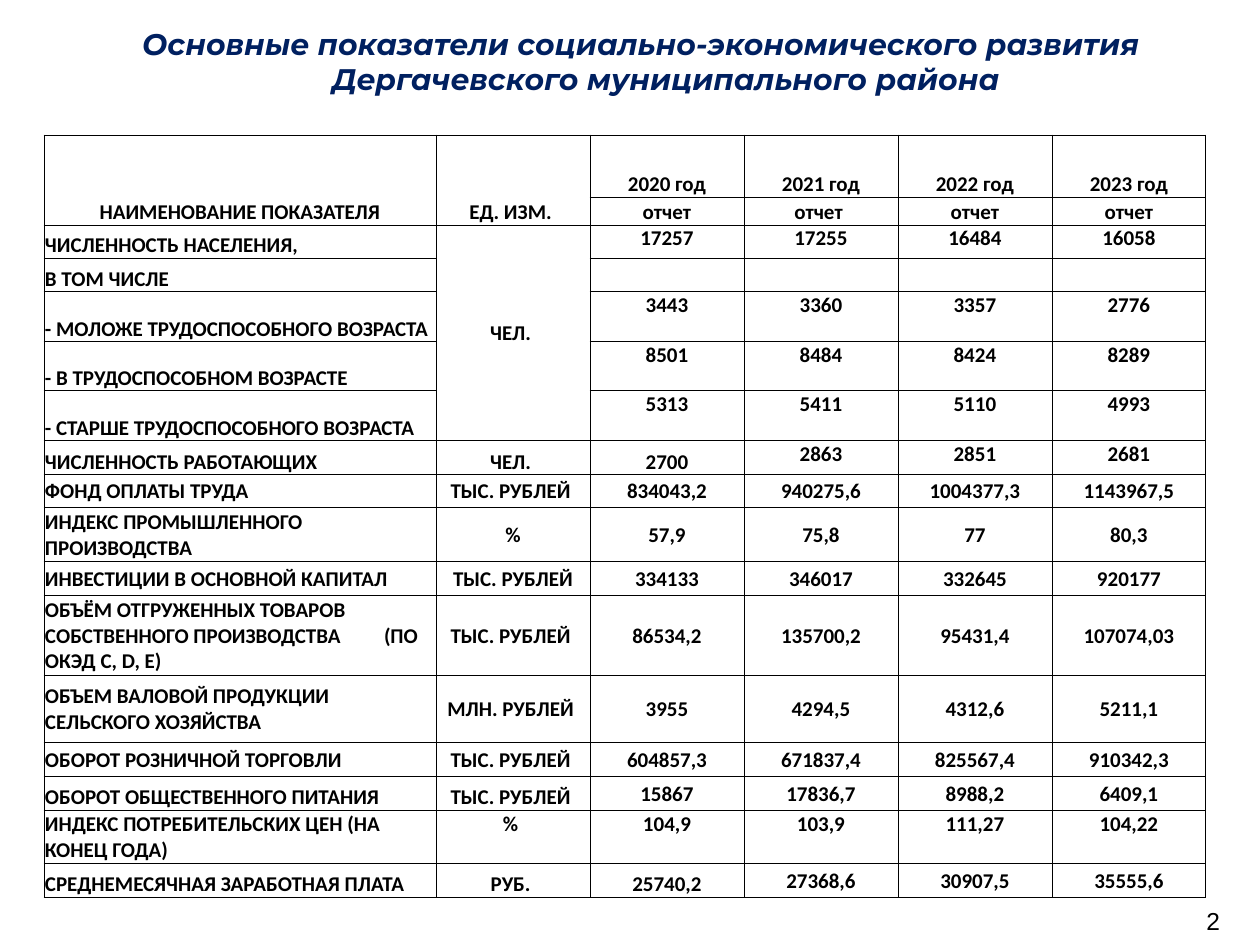
from lxml import etree
from pptx import Presentation, util as u
from pptx.dml.color import RGBColor
from pptx.enum import text
from pptx.oxml.ns import qn

PX = 7257
HUE = {"navy": "002060", "black": "000000"}
ANCHOR = {
    "t": text.MSO_ANCHOR.TOP,
    "m": text.MSO_ANCHOR.MIDDLE,
    "b": text.MSO_ANCHOR.BOTTOM,
}


def style(para, face, size, hue, bold=False, slant=False):
    for run in para.runs:
        font = run.font
        font.name, font.size = face, u.Pt(size)
        font.bold, font.italic = bold, slant
        font.color.rgb = RGBColor.from_string(HUE[hue])


def border(cell):
    props = cell._tc.get_or_add_tcPr()
    for side in ("a:lnL", "a:lnR", "a:lnT", "a:lnB"):
        line = etree.SubElement(props, qn(side), w=str(u.Pt(0.5)))
        fill = etree.SubElement(line, qn("a:solidFill"))
        etree.SubElement(fill, qn("a:srgbClr"), val=HUE["black"])


deck = Presentation()
deck.slide_width, deck.slide_height = u.Inches(10), u.Inches(7.5)
slide = deck.slides.add_slide(deck.slide_layouts[5])

title = slide.shapes.title
title.left, title.top = 107 * PX, 16 * PX
title.width, title.height = 1136 * PX, 90 * PX
frame = title.text_frame
frame.text = (
    "Основные показатели социально-экономического развития\n"
    "Дергачевского муниципального района"
)
frame.word_wrap = True
frame.auto_size = text.MSO_AUTO_SIZE.NONE
frame.vertical_anchor = ANCHOR["m"]
frame.margin_left, frame.margin_right = 13 * PX, 81 * PX
for para in frame.paragraphs:
    para.alignment = text.PP_ALIGN.CENTER
    style(para, "Montserrat", 17, "navy", True, True)
frame.paragraphs[1]._p.get_or_add_pPr().set("marL", str(50 * PX))

ROWS = [
    (62, "bbbbbb", "НАИМЕНОВАНИЕ ПОКАЗАТЕЛЯ|ЕД. ИЗМ. |2020 год|2021 год|2022 год|2023 год"),
    (28, "bbbbbb", "||отчет|отчет |отчет|отчет"),
    (33, "bmtttt", "ЧИСЛЕННОСТЬ НАСЕЛЕНИЯ,|ЧЕЛ. |17257|17255|16484|16058"),
    (34, "bmtttt", "В ТОМ ЧИСЛЕ|||||"),
    (50, "bmtttt", "- МОЛОЖЕ ТРУДОСПОСОБНОГО ВОЗРАСТА||3443|3360|3357|2776"),
    (49, "bmtttt", "- В ТРУДОСПОСОБНОМ ВОЗРАСТЕ||8501|8484|8424|8289"),
    (50, "bmtttt", "- СТАРШЕ ТРУДОСПОСОБНОГО ВОЗРАСТА||5313|5411|5110|4993"),
    (34, "bbbttt", "ЧИСЛЕННОСТЬ РАБОТАЮЩИХ|ЧЕЛ. |2700|2863|2851|2681"),
    (33, "mmmmmm", "ФОНД ОПЛАТЫ ТРУДА|ТЫС. РУБЛЕЙ |834043,2|940275,6|1004377,3|1143967,5"),
    (54, "mmmmmm", "ИНДЕКС ПРОМЫШЛЕННОГО ПРОИЗВОДСТВА|%|57,9|75,8|77|80,3"),
    (34, "mmmmmm", "ИНВЕСТИЦИИ В ОСНОВНОЙ КАПИТАЛ|ТЫС. РУБЛЕЙ|334133|346017|332645|920177"),
    (80, "mmmmmm", "ОБЪЁМ ОТГРУЖЕННЫХ ТОВАРОВ СОБСТВЕННОГО ПРОИЗВОДСТВА\t(ПО ОКЭД С, D, E)"
               "|ТЫС. РУБЛЕЙ |86534,2|135700,2|95431,4|107074,03"),
    (67, "mmmmmm", "ОБЪЕМ ВАЛОВОЙ ПРОДУКЦИИ СЕЛЬСКОГО ХОЗЯЙСТВА"
               "|МЛН. РУБЛЕЙ |3955|4294,5|4312,6|5211,1"),
    (34, "mmmmmm", "ОБОРОТ РОЗНИЧНОЙ ТОРГОВЛИ|ТЫС. РУБЛЕЙ |604857,3|671837,4|825567,4|910342,3"),
    (34, "bbmmmm", "ОБОРОТ ОБЩЕСТВЕННОГО ПИТАНИЯ|ТЫС. РУБЛЕЙ |15867|17836,7|8988,2|6409,1"),
    (53, "tttttt", "ИНДЕКС ПОТРЕБИТЕЛЬСКИХ ЦЕН (НА КОНЕЦ ГОДА)|% |104,9|103,9|111,27|104,22"),
    (34, "bbbmmm", "СРЕДНЕМЕСЯЧНАЯ ЗАРАБОТНАЯ ПЛАТА|РУБ. |25740,2|27368,6|30907,5|35555,6"),
]
COLS = [392] + [154] * 5
high = sum(row[0] for row in ROWS)
table = slide.shapes.add_table(
    len(ROWS), len(COLS), 44 * PX, 135 * PX, sum(COLS) * PX, high * PX
).table
table.first_row = table.horz_banding = False
for col, wide in zip(table.columns, COLS):
    col.width = wide * PX

for r, (tall, codes, line) in enumerate(ROWS):
    table.rows[r].height = tall * PX
    for c, words in enumerate(line.split("|")):
        cell = table.cell(r, c)
        border(cell)
        cell.fill.background()
        cell.margin_left = cell.margin_right = cell.margin_top = PX
        cell.margin_bottom = 0
        cell.vertical_anchor = ANCHOR[codes[c]]
        para = cell.text_frame.paragraphs[0]
        para.text = words
        if c or r < 2:
            para.alignment = text.PP_ALIGN.CENTER
        else:
            para.alignment = text.PP_ALIGN.LEFT
        style(para, "Calibri", 12, "black", True)
        if not words:
            etree.SubElement(para._p, qn("a:endParaRPr"), sz="1200")
        if "\t" in words:
            tabs = etree.SubElement(para._p.get_or_add_pPr(), qn("a:tabLst"))
            etree.SubElement(tabs, qn("a:tab"), pos=str(339 * PX), algn="l")

for top, end, col in ((0, 1, 0), (0, 1, 1), (2, 6, 1)):
    table.cell(top, col).merge(table.cell(end, col))

page = slide.shapes.add_textbox(1194 * PX, 900 * PX, 53 * PX, 43 * PX).text_frame
page.word_wrap = False
page.auto_size = text.MSO_AUTO_SIZE.SHAPE_TO_FIT_TEXT
page.text = "2"
style(page.paragraphs[0], "Arial", 14, "black")

deck.save("out.pptx")
